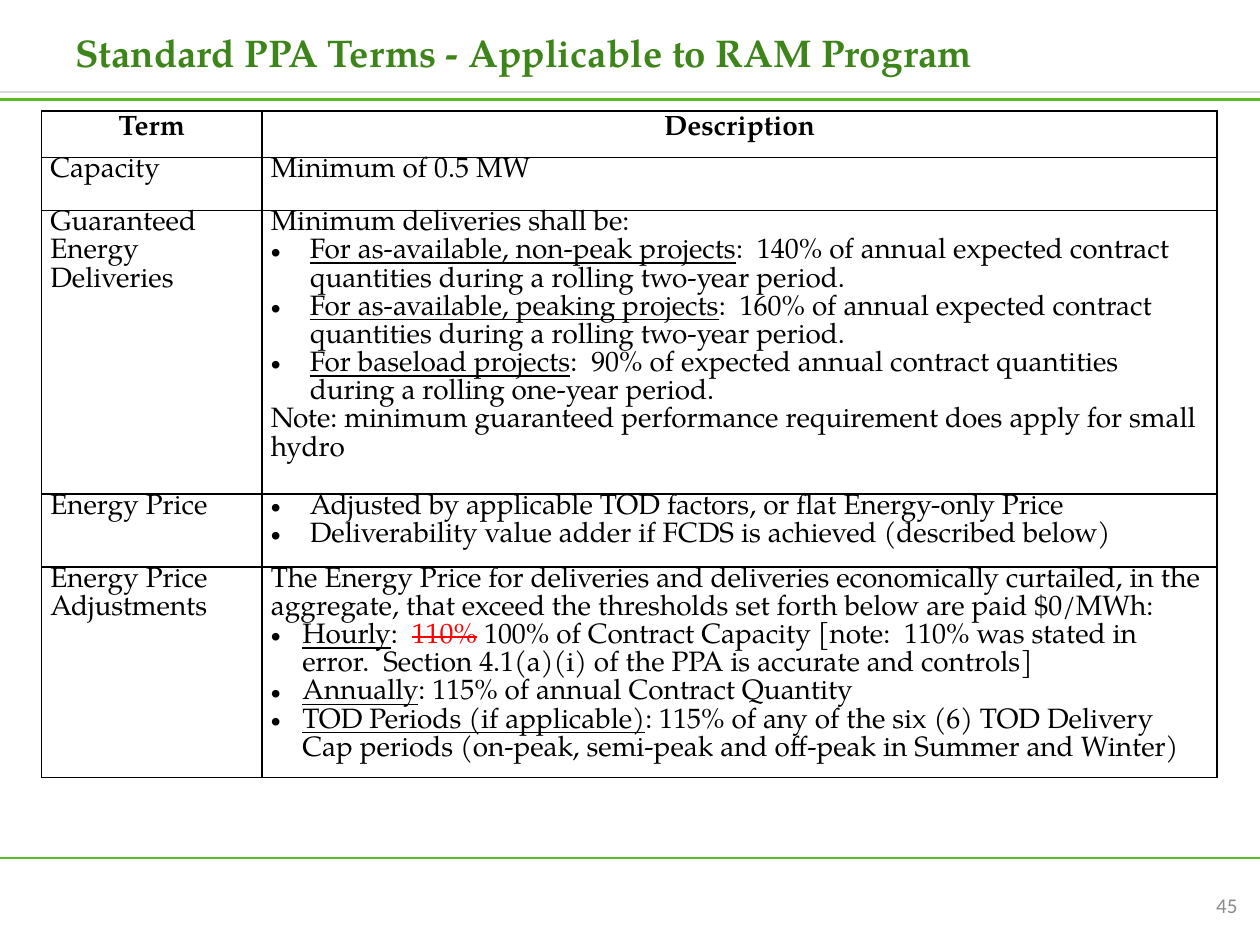
from pptx import Presentation
from pptx.util import Inches, Pt
from pptx.dml.color import RGBColor as RGB
from pptx.enum.shapes import MSO_CONNECTOR as Conn
from pptx.enum.text import PP_ALIGN as Align, MSO_ANCHOR as Anchor
from pptx.oxml.ns import qn
from lxml.etree import SubElement as Sub

# Content: a cell is a list of (bullet indent, runs); a run is (text, style)
TITLE = "Standard PPA Terms - Applicable to RAM Program"
PAGE = "45"
HEAD = ["Term", "Description"]
ROWS = [
    ("Capacity", [(0, [("Minimum of 0.5 MW", "")])]),
    ("Guaranteed Energy Deliveries", [
        (0, [("Minimum deliveries shall be:", "")]),
        (0.31, [("For as-available, non-peak projects", "under"),
                (":  140% of annual expected contract quantities during a rolling two-year period.", "")]),
        (0.31, [("For as-available, peaking projects", "under"),
                (":  160% of annual expected contract quantities during a rolling two-year period.", "")]),
        (0.31, [("For baseload projects", "under"),
                (":  90% of expected annual contract quantities during a rolling one-year period.", "")]),
        (0, [("Note: minimum guaranteed performance requirement does apply for small hydro", "")]),
    ]),
    ("Energy Price", [
        (0.31, [("Adjusted by applicable TOD factors, or flat Energy-only Price", "")]),
        (0.31, [("Deliverability value adder if FCDS is achieved (described below)", "")]),
    ]),
    ("Energy Price Adjustments", [
        (0, [("The Energy Price for deliveries and deliveries economically curtailed, in the "
              "aggregate, that exceed the thresholds set forth below are paid $0/MWh:", "")]),
        (0.25, [("Hourly", "under"), (":  ", ""), ("110%", "strike"),
                (" 100% of Contract Capacity [note:  110% was stated in error.  "
                 "Section 4.1(a)(i) of the PPA is accurate and controls]", "")]),
        (0.25, [("Annually", "under"), (": 115% of annual Contract Quantity", "")]),
        (0.25, [("TOD Periods (if applicable)", "under"),
                (": 115% of any of the six (6) TOD Delivery Cap periods "
                 "(on-peak, semi-peak and off-peak in Summer and Winter)", "")]),
    ]),
]
COLS = [1.75, 7.58]
TALL = [0.37, 0.42, 2.25, 0.58, 1.67]
RULES = [(0.73, "rule", 1.5), (6.81, "green", 1.5), (0.79, "green", 2.25)]

THEME = {
    "serif": "TeX Gyre Pagella", "sans": "Calibri",
    "title": 22, "body": 16, "page": 12,
    "ink": "000000", "red": "FF0000", "grey": "8C8C8C",
    "rule": "D9D9D9", "green": "58BD25", "dark": "3D841A",
}


def tint(name):
    return RGB.from_string(THEME[name])


def style(font, face, size, color, bold=False):
    font.name, font.size, font.bold = THEME[face], Pt(THEME[size]), bold
    font.color.rgb = tint(color)


def label(slide, box, text, align, *look):
    frame = slide.shapes.add_textbox(*map(Inches, box)).text_frame
    frame.word_wrap = True
    frame.vertical_anchor = Anchor.MIDDLE
    para = frame.paragraphs[0]
    para.text, para.alignment = text, align
    style(para.font, *look)


def bullet(para, indent):
    props = para._p.get_or_add_pPr()
    props.set("marL", str(Inches(indent)))
    props.set("indent", str(-Inches(indent)))
    Sub(props, qn("a:buFont"), typeface="Arial")
    Sub(props, qn("a:buChar"), char="•")


def border(cell):
    props = cell._tc.get_or_add_tcPr()
    for side in ("lnL", "lnR", "lnT", "lnB"):
        line = Sub(props, qn("a:" + side), w=str(Pt(1)))
        Sub(Sub(line, qn("a:solidFill")), qn("a:srgbClr"), val=THEME["ink"])


def write(cell, paras, head=False):
    cell.margin_left = cell.margin_right = Inches(0.07)
    cell.margin_top = cell.margin_bottom = 0
    border(cell)
    cell.fill.background()
    frame = cell.text_frame
    for i, (indent, runs) in enumerate(paras):
        para = frame.add_paragraph() if i else frame.paragraphs[0]
        if indent:
            bullet(para, indent)
        if head:
            para.alignment, para.line_spacing = Align.CENTER, 1.15
        style(para.font, "serif", "body", "ink", head)
        for text, mark in runs:
            run = para.add_run()
            run.text = text
            style(run.font, "serif", "body", "red" if mark == "strike" else "ink", head)
            if mark == "under":
                run.font.underline = True
            elif mark == "strike":
                run._r.get_or_add_rPr().set("strike", "sngStrike")


def main():
    deck = Presentation()
    deck.slide_width, deck.slide_height = Inches(10), Inches(7.5)
    slide = deck.slides.add_slide(deck.slide_layouts[6])

    # Rules across the slide
    for y, color, width in RULES:
        line = slide.shapes.add_connector(Conn.STRAIGHT, 0, Inches(y), Inches(10), Inches(y))
        line.line.color.rgb, line.line.width = tint(color), Pt(width)
        Sub(line._element.spPr, qn("a:effectLst"))

    # Table of terms
    box = (0.33, 0.88, sum(COLS), sum(TALL))
    table = slide.shapes.add_table(len(TALL), len(COLS), *map(Inches, box)).table
    table.first_row = table.horz_banding = False
    for col, width in zip(table.columns, COLS):
        col.width = Inches(width)
    for row, height in zip(table.rows, TALL):
        row.height = Inches(height)
    for c, text in enumerate(HEAD):
        write(table.cell(0, c), [(0, [(text, "")])], head=True)
    for r, (term, paras) in enumerate(ROWS, 1):
        write(table.cell(r, 0), [(0, [(term, "")])])
        write(table.cell(r, 1), paras)

    # Title and page number
    label(slide, (0.5, 0.08, 9, 0.67), TITLE, Align.LEFT, "serif", "title", "dark", True)
    label(slide, (7.59, 6.98, 2.33, 0.4), PAGE, Align.RIGHT, "sans", "page", "grey")
    deck.save("out.pptx")


if __name__ == "__main__":
    main()
